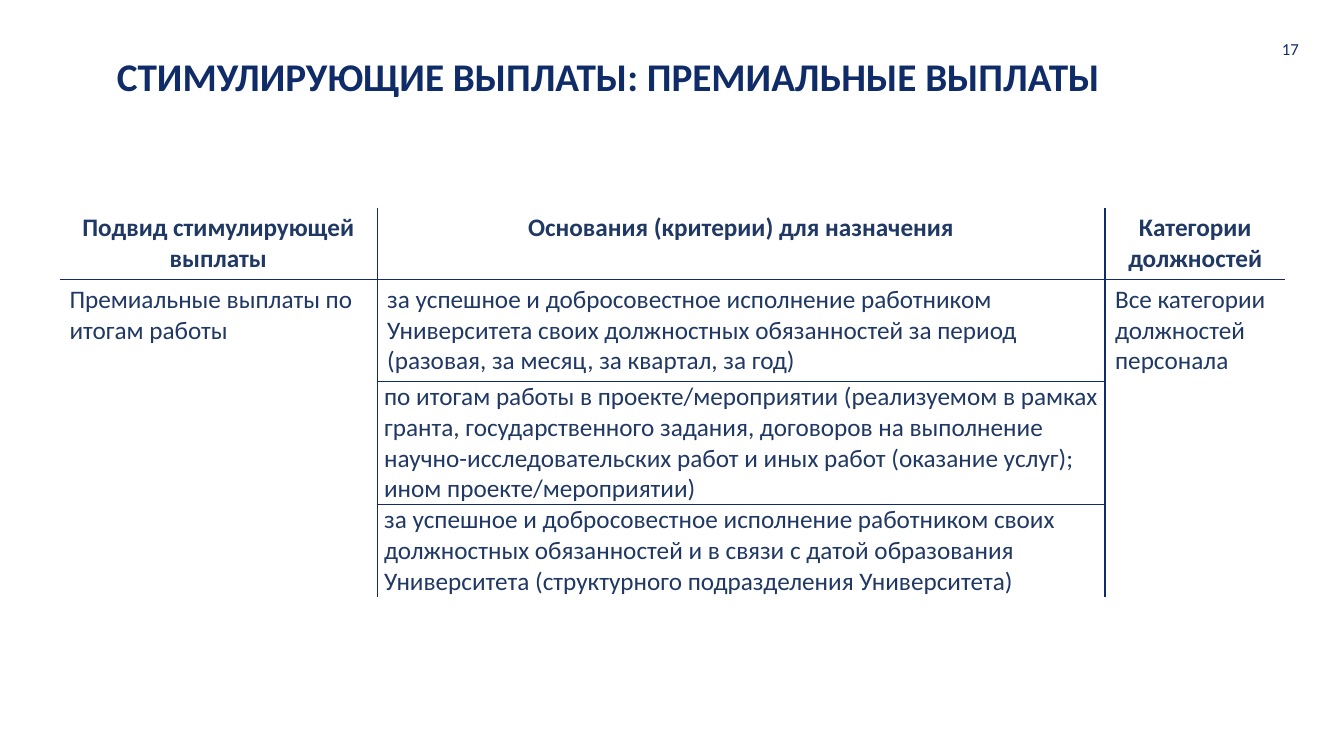
from dataclasses import dataclass
from lxml import etree
from pptx import Presentation, util as u
from pptx.dml.color import RGBColor
from pptx.enum import text
from pptx.oxml import ns


@dataclass
class Theme:
    font: str = "Calibri"
    navy: str = "0F2C68"
    body: str = "203864"
    title_size: int = 28
    table_size: int = 18
    number_size: int = 12


theme = Theme()


def style(p, size, color, bold=False, align=text.PP_ALIGN.LEFT):
    p.alignment = align
    p.font.name = theme.font
    p.font.size = u.Pt(size)
    p.font.bold = bold
    p.font.color.rgb = RGBColor.from_string(color)


def set_borders(cell, sides):
    tc_pr = cell._tc.get_or_add_tcPr()
    for i, side in enumerate("LRTB"):
        ln = etree.Element(ns.qn(f"a:ln{side}"), w=str(u.Pt(1)))
        if side in sides:
            fill = etree.SubElement(ln, ns.qn("a:solidFill"))
            etree.SubElement(fill, ns.qn("a:srgbClr"), val=theme.navy)
        else:
            etree.SubElement(ln, ns.qn("a:noFill"))
        tc_pr.insert(i, ln)


prs = Presentation()
prs.slide_width = u.Inches(13.33)
prs.slide_height = u.Inches(7.5)
s = prs.slides.add_slide(prs.slide_layouts[6])

rows = [
    ["Подвид стимулирующей выплаты",
     "Основания (критерии) для назначения",
     "Категории должностей"],
    ["Премиальные выплаты по итогам работы",
     "за успешное и добросовестное исполнение работником Университета своих "
     "должностных обязанностей за период (разовая, за месяц, за квартал, за год)",
     "Все категории должностей персонала"],
    ["",
     "по итогам работы в проекте/мероприятии (реализуемом в рамках гранта, "
     "государственного задания, договоров на выполнение научно-исследовательских "
     "работ и иных работ (оказание услуг); ином проекте/мероприятии)",
     ""],
    ["",
     "за успешное и добросовестное исполнение работником своих должностных "
     "обязанностей и в связи с датой образования Университета (структурного "
     "подразделения Университета)",
     ""],
]
col_widths = [3.15, 7.22, 1.79]
row_heights = [0.7, 1.01, 1.22, 0.92]

table = s.shapes.add_table(
    len(rows), len(col_widths), u.Inches(0.59), u.Inches(2.06),
    u.Inches(sum(col_widths)), u.Inches(sum(row_heights))).table
table.first_row = False
table.horz_banding = False
for column, width in zip(table.columns, col_widths):
    column.width = u.Inches(width)
for row, height in zip(table.rows, row_heights):
    row.height = u.Inches(height)
for c in (0, 2):
    table.cell(1, c).merge(table.cell(3, c))

for r, row in enumerate(rows):
    for c, wording in enumerate(row):
        cell = table.cell(r, c)
        sides = {0: "R", 1: "LR", 2: "L"}[c]
        if r == 1 or (r > 1 and c == 1):
            sides += "T"
        if r == 0 or (r < 3 and c == 1):
            sides += "B"
        set_borders(cell, sides)
        cell.fill.background()
        if r > 1 and c == 1:
            cell.margin_left = cell.margin_right = u.Inches(0.07)
            cell.margin_top = cell.margin_bottom = 0
        if wording:
            cell.text = wording
            align = text.PP_ALIGN.CENTER if r == 0 else text.PP_ALIGN.LEFT
            style(cell.text_frame.paragraphs[0], theme.table_size, theme.body, r == 0, align)

number = s.shapes.add_textbox(u.Inches(12.26), u.Inches(0.23), u.Inches(0.72), u.Inches(0.5))
tf = number.text_frame
tf.word_wrap = True
tf.vertical_anchor = text.MSO_ANCHOR.MIDDLE
tf.text = "17"
style(tf.paragraphs[0], theme.number_size, theme.navy, align=text.PP_ALIGN.RIGHT)

title = s.shapes.add_textbox(u.Inches(1.13), u.Inches(0.49), u.Inches(10.74), u.Inches(0.46))
tf = title.text_frame
tf.word_wrap = True
tf.margin_left = tf.margin_right = tf.margin_top = tf.margin_bottom = u.Inches(0.03)
tf.text = "СТИМУЛИРУЮЩИЕ ВЫПЛАТЫ: ПРЕМИАЛЬНЫЕ ВЫПЛАТЫ"
style(tf.paragraphs[0], theme.title_size, theme.navy, bold=True)

prs.save("out.pptx")
